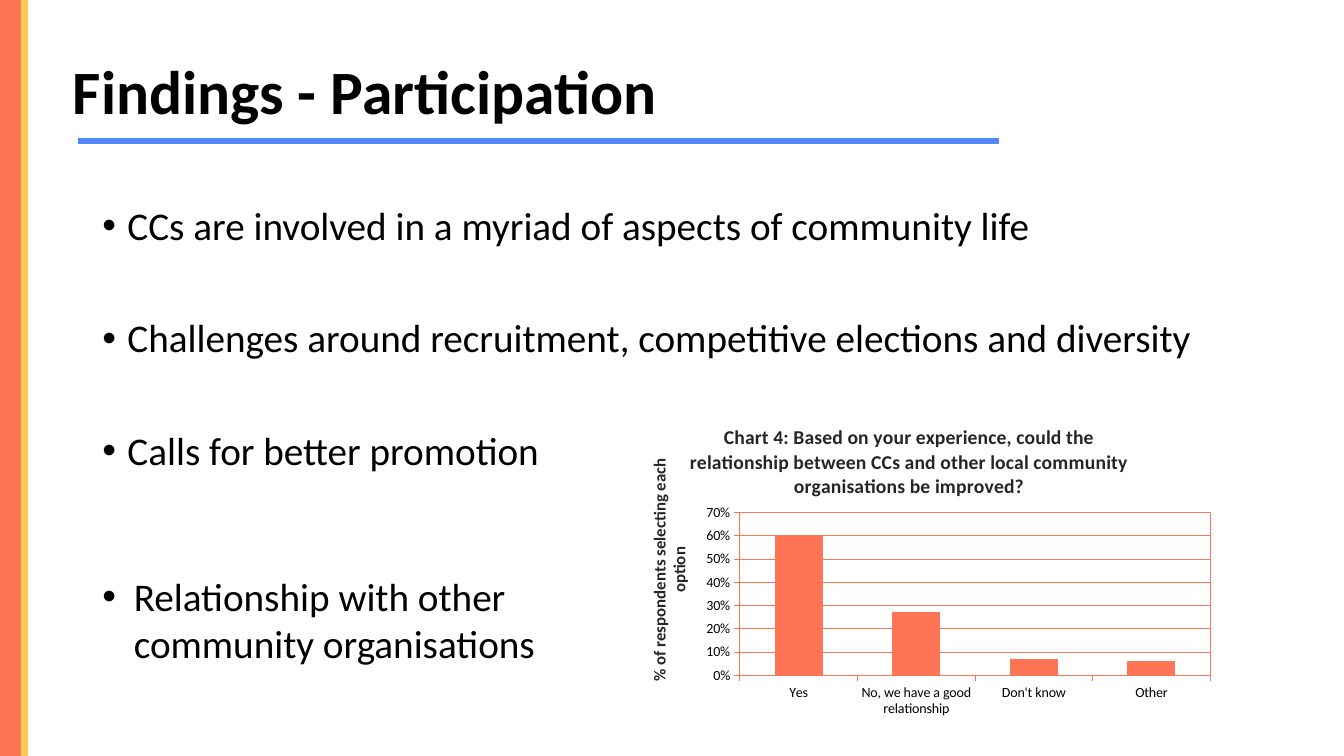
from pptx import Presentation
from pptx.chart.data import CategoryChartData
from pptx.dml.color import RGBColor
from pptx.enum.chart import XL_CHART_TYPE, XL_TICK_MARK
from pptx.enum.shapes import MSO_SHAPE
from pptx.enum.text import MSO_ANCHOR
from pptx.oxml import parse_xml
from pptx.oxml.ns import nsdecls, qn
from pptx.util import Pt

PX = 9525
FONT = "Calibri"
BLACK = RGBColor(0x00, 0x00, 0x00)
CHARCOAL = RGBColor(0x26, 0x26, 0x26)
BLUE = RGBColor(0x55, 0x88, 0xFF)
YELLOW = RGBColor(0xFF, 0xC9, 0x55)
CORAL = RGBColor(0xFF, 0x74, 0x55)
RECTANGLE = MSO_SHAPE.RECTANGLE
COLUMN = XL_CHART_TYPE.COLUMN_CLUSTERED
TICK_OUT = XL_TICK_MARK.OUTSIDE
TOP, MIDDLE = MSO_ANCHOR.TOP, MSO_ANCHOR.MIDDLE


def emu(box):
    """Turn a box in px into EMU lengths."""
    return [length * PX for length in box]


def style_font(font, size, color=BLACK, bold=False):
    """Set the typeface, size, colour and weight of a font."""
    font.name, font.size, font.bold = FONT, Pt(size), bold
    font.color.rgb = color


def style_line(line, color, width=0.75):
    """Set the colour and width of a line."""
    line.color.rgb = color
    line.width = Pt(width)


def add_text(slide, box, lines, size=28, bold=False, anchor=TOP, spacing=0.9, gap=0, indent=0):
    """Add a text box, with bullets when an indent in px is given."""
    frame = slide.shapes.add_textbox(*emu(box)).text_frame
    frame.word_wrap = True
    frame.vertical_anchor = anchor
    for number, line in enumerate(lines):
        paragraph = frame.paragraphs[0] if number == 0 else frame.add_paragraph()
        if indent:
            properties = paragraph._p.get_or_add_pPr()
            properties.set("marL", str(indent * PX))
            properties.set("indent", str(-indent * PX))
            properties.append(parse_xml(f'<a:buFont {nsdecls("a")} typeface="Arial"/>'))
            properties.append(parse_xml(f'<a:buChar {nsdecls("a")} char="•"/>'))
        paragraph.line_spacing = spacing
        if number:
            paragraph.space_before = Pt(gap)
        run = paragraph.add_run()
        run.text = line
        style_font(run.font, size, bold=bold)


def add_bar(slide, box, color):
    """Add a plain coloured bar."""
    bar = slide.shapes.add_shape(RECTANGLE, *emu(box))
    bar.shadow.inherit = False
    bar.fill.solid()
    bar.fill.fore_color.rgb = color
    style_line(bar.line, color, 1)


def add_side_stripes(slide, box):
    """Draw the stripes down the left edge."""
    left, top, _, height = box
    for offset, width, color in ((19, 3, BLUE), (21, 5, YELLOW), (0, 19, CORAL)):
        add_bar(slide, (left + offset, top, width, height), color)


def add_heading(slide, box):
    """Place the title and its underline."""
    left, top, _, _ = box
    add_text(slide, box, ["Findings - Participation"], size=44, bold=True, anchor=MIDDLE)
    add_bar(slide, (left + 15, top + 111, 876, 5), BLUE)


def add_findings(slide, box):
    """List the findings, the last one beside the chart."""
    left, top, _, _ = box
    add_text(slide, box, [
        "CCs are involved in a myriad of aspects of community life",
        "Challenges around recruitment, competitive elections and diversity",
        "Calls for better promotion",
    ], gap=50, indent=24)
    add_text(slide, (left, top + 348, 438, 130),
             ["Relationship with other community organisations"], spacing=1, indent=30)


def set_layout(element, target="", **fractions):
    """Fix the place of a chart part as fractions of the chart."""
    modes = "".join(f'<c:{axis}Mode val="edge"/>' for axis in "xy")
    values = "".join(f'<c:{key} val="{value}"/>' for key, value in fractions.items())
    layout = parse_xml(f'<c:layout {nsdecls("c")}><c:manualLayout>{target}{modes}{values}'
                       '</c:manualLayout></c:layout>')
    current = element.find(qn("c:layout"))
    if current is None:
        element.insert(0, layout)
    else:
        element.replace(current, layout)


def set_chart_title(title, text, size, x, y):
    """Write and place the title of a chart or an axis."""
    title.text_frame.text = text
    style_font(title.text_frame.paragraphs[0].runs[0].font, size, CHARCOAL, True)
    set_layout(title._element, x=x, y=y)


def add_relationship_chart(slide, box):
    """Chart the answers on relationships with local organisations."""
    answers = CategoryChartData(number_format="0%")
    answers.categories = ["Yes", "No, we have a good relationship", "Don't know", "Other"]
    answers.add_series("Series 1", (0.6, 0.27, 0.07, 0.06))
    chart = slide.shapes.add_chart(COLUMN, *emu(box), answers).chart
    style_font(chart.font, 10)
    chart.has_legend = False
    set_chart_title(
        chart.chart_title,
        "Chart 4: Based on your experience, could the relationship between CCs "
        "and other local community organisations be improved?", 14, 0.1, 0.05)

    plot = chart.plots[0]
    plot.gap_width = 150
    plot.vary_by_categories = False
    columns = plot.series[0].format
    columns.fill.solid()
    columns.fill.fore_color.rgb = CORAL
    style_line(columns.line, CORAL)

    percent = chart.value_axis
    for axis in (chart.category_axis, percent):
        axis.major_tick_mark = TICK_OUT
        style_line(axis.format.line, CORAL)
        style_font(axis.tick_labels.font, 10)
    percent.minimum_scale, percent.maximum_scale, percent.major_unit = 0, 0.7, 0.1
    percent.tick_labels.number_format = "0%"
    percent.tick_labels.number_format_is_linked = False
    style_line(percent.major_gridlines.format.line, CORAL)
    set_chart_title(percent.axis_title, "% of respondents selecting each option", 12, 0.03, 0.16)
    direction = percent.axis_title.text_frame._txBody.bodyPr
    direction.set("rot", "-5400000")
    direction.set("vert", "horz")

    plot_area = plot._element.getparent()
    set_layout(plot_area, '<c:layoutTarget val="inner"/>', x=0.19, y=0.34, w=0.79, h=0.51)
    plot_area.append(parse_xml(
        f'<c:spPr {nsdecls("c", "a")}><a:noFill/><a:ln w="{Pt(0.75)}"><a:solidFill>'
        f'<a:srgbClr val="{CORAL}"/></a:solidFill></a:ln></c:spPr>'))


def main():
    """Build and save the slide."""
    deck = Presentation()
    deck.slide_width, deck.slide_height = emu((1280, 720))
    slide = deck.slides.add_slide(deck.slide_layouts[6])
    add_side_stripes(slide, (0, 0, 26, 720))
    add_heading(slide, (60, 21, 1104, 139))
    add_findings(slide, (88, 192, 1104, 275))
    add_relationship_chart(slide, (597, 385, 567, 304))
    deck.save("out.pptx")


if __name__ == "__main__":
    main()
